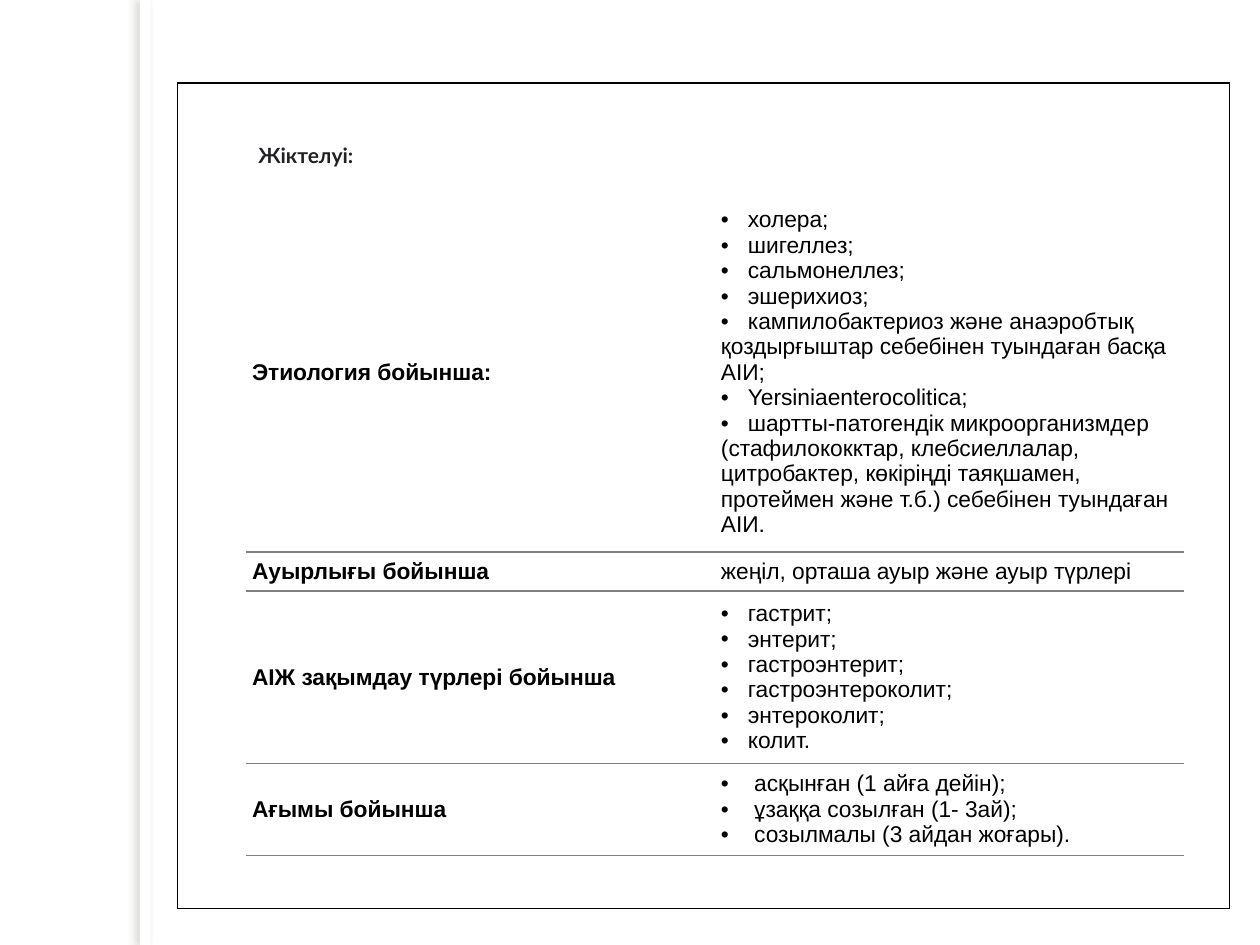
from dataclasses import dataclass

from lxml import etree
from pptx import Presentation
from pptx.dml.color import RGBColor
from pptx.enum.shapes import MSO_SHAPE
from pptx.enum.text import MSO_ANCHOR, MSO_AUTO_SIZE, PP_ALIGN
from pptx.oxml.ns import qn
from pptx.util import Pt

RECTANGLE = MSO_SHAPE.RECTANGLE
TOP, MIDDLE = MSO_ANCHOR.TOP, MSO_ANCHOR.MIDDLE
LEFT = PP_ALIGN.LEFT
NO_AUTOFIT = MSO_AUTO_SIZE.NONE
TITLE_ONLY = 5


@dataclass(frozen=True)
class Theme:
    white: str = "FFFFFF"
    text: str = "000000"
    title: str = "202124"
    rule: str = "808080"
    shadow: str = "706B5F"
    body_font: str = "Arial"
    title_font: str = "Lato"
    body_size: float = 13
    title_size: float = 12


THEME = Theme()

ROWS = [
    ("Этиология бойынша:", 205.2, 15.4, [
        "холера;",
        "шигеллез;",
        "сальмонеллез;",
        "эшерихиоз;",
        "кампилобактериоз және анаэробтық қоздырғыштар себебінен туындаған басқа АІИ;",
        "Yersiniaenterocolitica;",
        "шартты-патогендік микроорганизмдер (стафилококктар, клебсиеллалар, "
        "цитробактер, көкіріңді таяқшамен, протеймен және т.б.) себебінен туындаған АІИ.",
    ]),
    ("Ауырлығы бойынша", 22.3, None, ["жеңіл, орташа ауыр және ауыр түрлері"]),
    ("АІЖ зақымдау түрлері бойынша", 98.6, 15.4, [
        "гастрит;", "энтерит;", "гастроэнтерит;",
        "гастроэнтероколит;", "энтероколит;", "колит.",
    ]),
    ("Ағымы бойынша", 52.5, 19, [
        "асқынған (1 айға дейін);",
        "ұзаққа созылған (1- 3ай);",
        "созылмалы (3 айдан жоғары).",
    ]),
]


def color(value):
    return RGBColor.from_string(value)


def add_color(parent, value):
    return etree.SubElement(parent, qn("a:srgbClr"), val=value)


def format_font(font, name, size, value, bold):
    font.name, font.size, font.bold = name, Pt(size), bold
    font.color.rgb = color(value)


def add_strip(slide):
    strip = slide.shapes.add_shape(RECTANGLE, Pt(80), Pt(0), Pt(5.8), Pt(540))
    strip.fill.solid()
    strip.fill.fore_color.rgb = color(THEME.white)
    strip.line.fill.background()
    strip.shadow.inherit = False
    effects = strip.element.spPr.find(qn("a:effectLst"))
    shadow = etree.SubElement(
        effects, qn("a:outerShdw"), blurRad=str(Pt(5)), dist=str(Pt(3)),
        dir="10800000", algn="tl", rotWithShape="0")
    etree.SubElement(add_color(shadow, THEME.shadow), qn("a:alpha"), val="25000")


def set_title(slide):
    title = slide.shapes.title
    title.left, title.top, title.width, title.height = Pt(140.4), Pt(77), Pt(69), Pt(65.5)
    title.fill.solid()
    title.fill.fore_color.rgb = color(THEME.white)
    frame = title.text_frame
    frame.text = "Жіктелуі:"
    frame.word_wrap = False
    frame.auto_size = NO_AUTOFIT
    frame.vertical_anchor = TOP
    frame.margin_left = frame.margin_right = Pt(7.2)
    frame.margin_top = frame.margin_bottom = Pt(4.5)
    paragraph = frame.paragraphs[0]
    paragraph.alignment = LEFT
    paragraph.line_spacing = 1.0
    format_font(paragraph.runs[0].font, THEME.title_font, THEME.title_size, THEME.title, True)


def set_borders(cell, sides, value, width):
    properties = cell._tc.get_or_add_tcPr()
    for index, side in enumerate("LRTB"):
        line = etree.Element(qn(f"a:ln{side}"), w=str(Pt(width)))
        if side in sides:
            add_color(etree.SubElement(line, qn("a:solidFill")), value)
        else:
            etree.SubElement(line, qn("a:noFill"))
        properties.insert(index, line)


def add_plain_table(slide, left, top, widths, heights):
    table = slide.shapes.add_table(
        len(heights), len(widths), Pt(left), Pt(top),
        Pt(sum(widths)), Pt(sum(heights))).table
    table.first_row = table.horz_banding = False
    for column, width in zip(table.columns, widths):
        column.width = Pt(width)
    for row, height in zip(table.rows, heights):
        row.height = Pt(height)
    for cell in table.iter_cells():
        cell.fill.background()
    return table


def add_bullet(paragraph, tab):
    properties = paragraph._p.get_or_add_pPr()
    properties.set("marL", "0")
    properties.set("indent", "0")
    etree.SubElement(properties, qn("a:buFont"), typeface=THEME.body_font)
    etree.SubElement(properties, qn("a:buChar"), char="•")
    tabs = etree.SubElement(properties, qn("a:tabLst"))
    etree.SubElement(tabs, qn("a:tab"), pos=str(Pt(tab)), algn="l")


def fill_cell(cell, lines, bold=False, tab=None):
    cell.vertical_anchor = MIDDLE
    cell.margin_left = cell.margin_right = Pt(3.6)
    cell.margin_top = cell.margin_bottom = Pt(3.6)
    frame = cell.text_frame
    frame.text = "\n".join(f"\t{line}" if tab else line for line in lines)
    for paragraph in frame.paragraphs:
        if tab:
            add_bullet(paragraph, tab)
        format_font(paragraph.runs[0].font, THEME.body_font, THEME.body_size, THEME.text, bold)


def add_classification(slide):
    heights = [height for _, height, _, _ in ROWS]
    table = add_plain_table(slide, 140.4, 110.2, [268, 268], heights)
    for index, (label, _, tab, lines) in enumerate(ROWS):
        fill_cell(table.cell(index, 0), [label], bold=True)
        fill_cell(table.cell(index, 1), lines, tab=tab)
        for cell in table.rows[index].cells:
            set_borders(cell, "TB" if index else "B", THEME.rule, 0.75)


def add_frame(slide):
    table = add_plain_table(slide, 101.5, 47.5, [601], [471.6])
    set_borders(table.cell(0, 0), "LRTB", THEME.text, 1)


def main():
    presentation = Presentation()
    presentation.slide_width, presentation.slide_height = Pt(720), Pt(540)
    slide = presentation.slides.add_slide(presentation.slide_layouts[TITLE_ONLY])
    add_strip(slide)
    set_title(slide)
    add_classification(slide)
    add_frame(slide)
    presentation.save("out.pptx")


if __name__ == "__main__":
    main()
